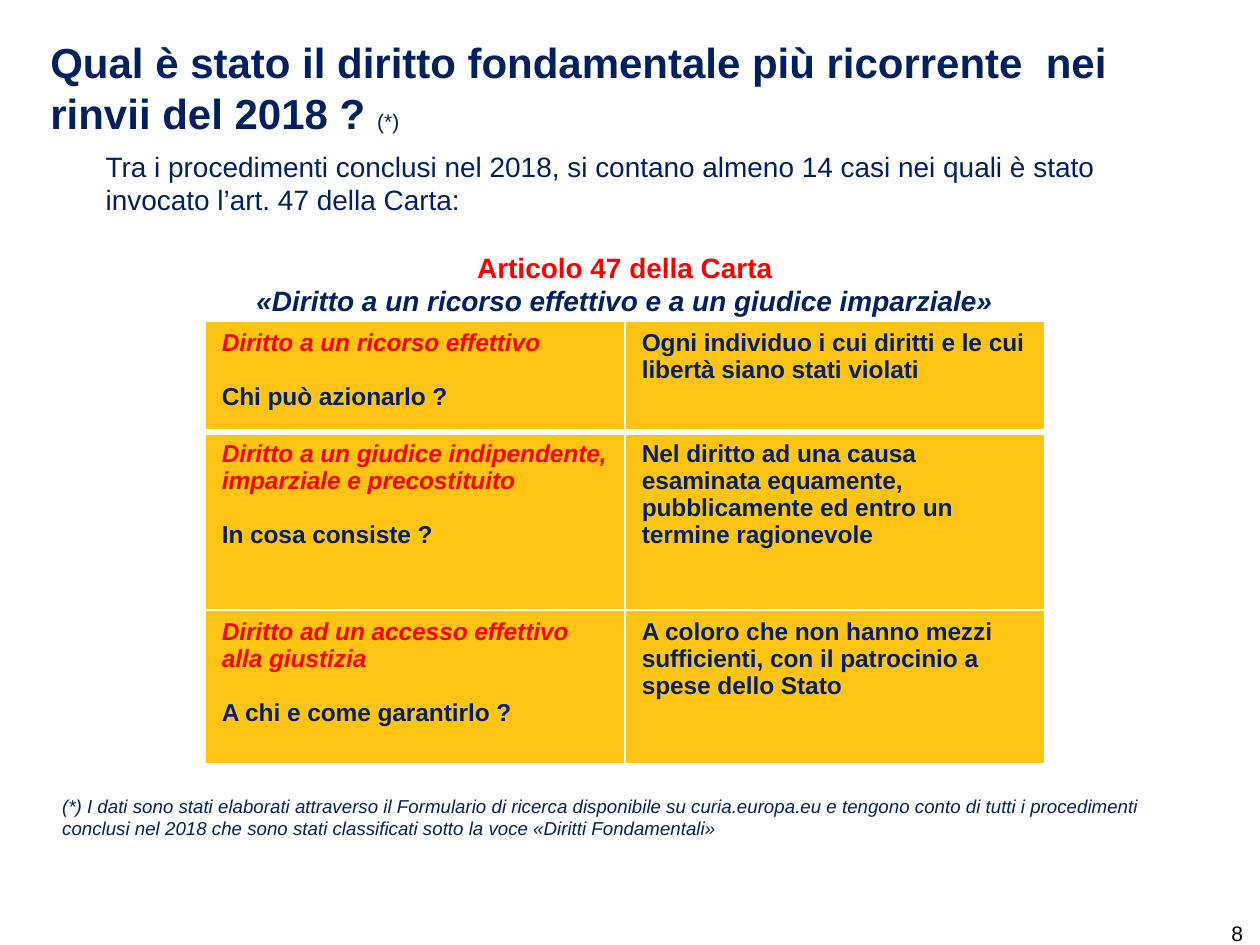
from dataclasses import dataclass

from lxml import etree
from pptx import Presentation
from pptx.dml.color import RGBColor
from pptx.enum.text import MSO_ANCHOR, PP_ALIGN
from pptx.oxml.ns import qn
from pptx.util import Inches, Pt

TOP, BOTTOM = MSO_ANCHOR.TOP, MSO_ANCHOR.BOTTOM
LEFT, CENTER = PP_ALIGN.LEFT, PP_ALIGN.CENTER


@dataclass(frozen=True)
class Theme:
    font: str = "Arial"
    navy: str = "002060"
    red: str = "FF0000"
    black: str = "000000"
    white: str = "FFFFFF"
    gold: str = "FFC000"
    gold_alpha: int = 92
    title: float = 18
    body: float = 12
    cell: float = 10.5
    small: float = 9
    note: float = 8
    body_gap: float = 14.4
    cell_gap: float = 11.7


class SlideBuilder:
    def __init__(self, prs, theme):
        self.theme = theme
        self.s = prs.slides.add_slide(prs.slide_layouts[6])

    def run(self, p, text, size, color, bold=False, italic=False):
        r = p.add_run()
        r.text = text
        r.font.name = self.theme.font
        r.font.size = Pt(size)
        r.font.color.rgb = RGBColor.from_string(color)
        r.font.bold, r.font.italic = bold, italic

    def paragraphs(self, tf, items):
        """Each item is (runs, alignment, space before in points)."""
        for i, (runs, align, gap) in enumerate(items):
            p = tf.paragraphs[0] if i == 0 else tf.add_paragraph()
            p.alignment = align
            if gap:
                p.space_before = Pt(gap)
            for r in runs:
                self.run(p, *r)

    def text(self, box, items, anchor=TOP, insets=(0.08, 0.04, 0.08, 0.04)):
        tf = self.s.shapes.add_textbox(*map(Inches, box)).text_frame
        tf.word_wrap = True
        tf.vertical_anchor = anchor
        tf.margin_left, tf.margin_top, tf.margin_right, tf.margin_bottom = map(Inches, insets)
        self.paragraphs(tf, items)

    def cell(self, cell, items, bottom_width):
        t = self.theme
        self.paragraphs(cell.text_frame, items)
        cell.fill.solid()
        cell.fill.fore_color.rgb = RGBColor.from_string(t.gold)
        tc_pr = cell._tc.get_or_add_tcPr()
        color = tc_pr.find(qn("a:solidFill")).find(qn("a:srgbClr"))
        etree.SubElement(color, qn("a:alpha"), val=str(t.gold_alpha * 1000))
        # Borders come before the fill in the cell properties
        sides = {"lnL": 1, "lnR": 1, "lnT": 1, "lnB": bottom_width}
        for i, (side, width) in enumerate(sides.items()):
            ln = etree.Element(qn(f"a:{side}"), w=str(Pt(width)))
            fill = etree.SubElement(ln, qn("a:solidFill"))
            etree.SubElement(fill, qn("a:srgbClr"), val=t.white)
            tc_pr.insert(i, ln)

    def rights_table(self, left, top, col_width, row_heights, rows):
        t = self.theme
        table = self.s.shapes.add_table(
            len(rows), 2, Inches(left), Inches(top),
            Inches(2 * col_width), Inches(sum(row_heights))).table
        for col in table.columns:
            col.width = Inches(col_width)
        for i, (right, question, answer) in enumerate(rows):
            table.rows[i].height = Inches(row_heights[i])
            bottom = 3 if i == 0 else 1
            self.cell(table.cell(i, 0), [
                ([(right, t.cell, t.red, True, True)], LEFT, 0),
                ([(question, t.cell, t.navy, True)], LEFT, t.cell_gap),
            ], bottom)
            self.cell(table.cell(i, 1), [([(answer, t.cell, t.navy, True)], LEFT, 0)], bottom)


def main():
    prs = Presentation()
    # 4:3 format
    prs.slide_width = Inches(7.5)
    prs.slide_height = Inches(7.5 * 3 / 4)
    t = Theme()
    slide = SlideBuilder(prs, t)

    # Title
    slide.text((0.3, 0.1, 7.01, 0.76), [([
        ("Qual è stato il diritto fondamentale più ricorrente  nei rinvii del 2018 ? ",
         t.title, t.navy, True),
        ("(*)", t.small, t.navy),
    ], LEFT, 0)], BOTTOM, (0, 0.04, 0.08, 0.04))

    # Introduction and article heading
    slide.text((0.53, 0.84, 6.38, 1.06), [
        ([("Tra i procedimenti conclusi nel 2018, si contano almeno 14 casi nei quali "
           "è stato invocato l’art. 47 della Carta:", t.body, t.navy)], LEFT, 0),
        ([("Articolo 47 della Carta", t.body, t.red, True)], CENTER, t.body_gap),
        ([("«Diritto a un ricorso effettivo e a un giudice imparziale»",
           t.body, t.navy, True, True)], CENTER, 0),
    ], insets=(0.1, 0.05, 0.1, 0.05))

    # Rights, questions and answers
    slide.rights_table(1.22, 1.91, 2.5, (0.66, 1.06, 0.92), [
        ("Diritto a un ricorso effettivo", "Chi può azionarlo ?",
         "Ogni individuo i cui diritti e le cui libertà siano stati violati"),
        ("Diritto a un giudice indipendente, imparziale e precostituito",
         "In cosa consiste ?",
         "Nel diritto ad una causa esaminata equamente, pubblicamente ed entro "
         "un termine ragionevole"),
        ("Diritto ad un accesso effettivo alla giustizia", "A chi e come garantirlo ?",
         "A coloro che non hanno mezzi sufficienti, con il patrocinio a spese dello Stato"),
    ])

    # Footnote and page number
    slide.text((0.29, 4.69, 6.85, 0.36), [([
        ("(*) I dati sono stati elaborati attraverso il Formulario di ricerca disponibile su "
         "curia.europa.eu e tengono conto di tutti i procedimenti conclusi nel 2018 che sono "
         "stati classificati sotto la voce «Diritti Fondamentali»",
         t.note, t.navy, False, True)], LEFT, 0)])
    slide.text((7.25, 5.44, 0.25, 0.19), [([("8", t.small, t.black)], LEFT, 0)])

    prs.save("out.pptx")


if __name__ == "__main__":
    main()
